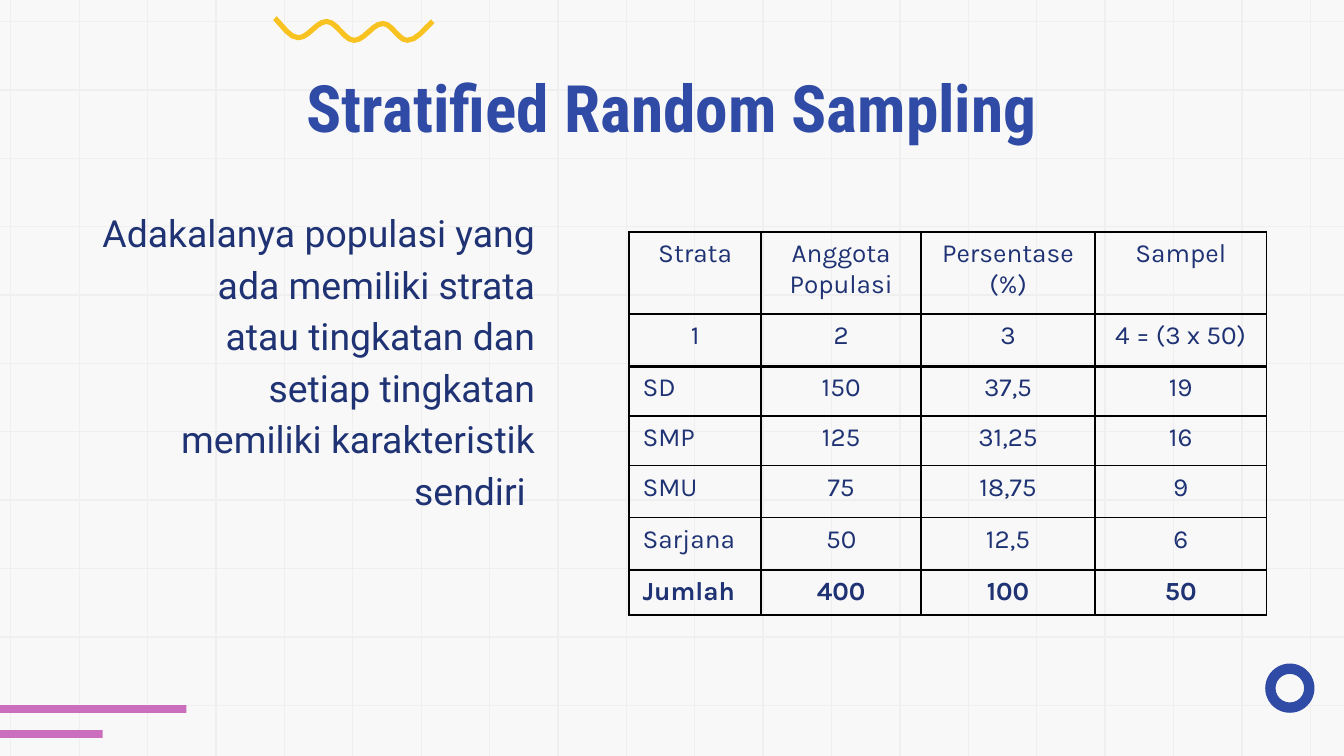
from dataclasses import dataclass
from itertools import pairwise
from math import cos, hypot, pi

from lxml import etree
from pptx import Presentation
from pptx.dml.color import RGBColor
from pptx.enum import shapes, text
from pptx.oxml import ns
from pptx.util import Pt


@dataclass(frozen=True)
class Theme:
    paper: str = "F8F8F8"
    grid: str = "EFEFEF"
    blue: str = "304BA6"
    ink: str = "1F3374"
    pink: str = "CB6EBE"
    yellow: str = "F8C220"
    border: str = "000000"
    title_size: int = 35
    body_size: int = 20
    table_size: int = 14


theme = Theme()


def paint(shape, color):
    shape.shadow.inherit = False
    shape.fill.solid()
    shape.fill.fore_color.rgb = RGBColor.from_string(color)
    shape.line.fill.background()


def style(p, name, size, color, align, bold=False):
    p.alignment = align
    p.font.name = name
    p.font.size = Pt(size)
    p.font.bold = bold
    p.font.color.rgb = RGBColor.from_string(color)


prs = Presentation()
prs.slide_width, prs.slide_height = Pt(720), Pt(405)
layout = prs.slide_layouts[5]
s = prs.slides.add_slide(layout)
s.background.fill.solid()
s.background.fill.fore_color.rgb = RGBColor.from_string(theme.paper)

grid = s.shapes.add_group_shape()
decor = s.shapes.add_group_shape()

step = 36.64
lines = [(720, 11.5 + i * step, 0, 11.5 + i * step) for i in range(11)]
lines += [(5.8 + i * step, -13, 5.8 + i * step, 418) for i in range(20)]
for ends in lines:
    line = grid.shapes.add_connector(shapes.MSO_CONNECTOR.STRAIGHT, *map(Pt, ends))
    line.line.color.rgb = RGBColor.from_string(theme.grid)
    line.line.width = Pt(0.75)
    etree.SubElement(line._element.spPr, ns.qn("a:effectLst"))

for top, width in ((377.8, 99.8), (391.2, 55)):
    bar = decor.shapes.add_shape(shapes.MSO_SHAPE.RECTANGLE, 0, Pt(top), Pt(width), Pt(4.2))
    paint(bar, theme.pink)

ring = decor.shapes.add_shape(shapes.MSO_SHAPE.DONUT, Pt(677.8), Pt(355.5), Pt(26.4), Pt(26.4))
ring.adjustments[0] = 0.21
paint(ring, theme.blue)

knots = [(141, 6.2), (159.8, 20.2), (175, 11.5), (189.7, 21.6),
         (205.2, 12.6), (218.2, 21.6), (238.6, 8)]
wave = [(x0 + (x1 - x0) * i / 6, y0 + (y1 - y0) * (1 - cos(pi * i / 6)) / 2)
        for (x0, y0), (x1, y1) in pairwise(knots) for i in range(6)]
upper, lower = [], []
for (x0, y0), (x, y), (x1, y1) in zip(wave, wave[1:], wave[2:]):
    if 147 <= x <= 232:
        length = hypot(x1 - x0, y1 - y0)
        dx, dy = 1.4 * (y1 - y0) / length, 1.4 * (x1 - x0) / length
        upper.append((Pt(x + dx), Pt(y - dy)))
        lower.append((Pt(x - dx), Pt(y + dy)))
outline = upper + lower[::-1]
builder = decor.shapes.build_freeform(*outline[0])
builder.add_line_segments(outline[1:], close=True)
paint(builder.convert_to_shape(), theme.yellow)

for group in (grid, decor):
    layout.shapes._spTree.append(group._element)

title = s.shapes.title
title.left, title.top, title.width, title.height = Pt(36), Pt(28.8), Pt(648), Pt(57.6)
tf = title.text_frame
tf.text = "Stratified Random Sampling"
tf.vertical_anchor = text.MSO_ANCHOR.TOP
tf.margin_left = tf.margin_right = tf.margin_top = tf.margin_bottom = Pt(7.2)
style(tf.paragraphs[0], "Roboto Condensed", theme.title_size, theme.blue,
      text.PP_ALIGN.CENTER, True)

body = s.shapes.add_textbox(Pt(36), Pt(113.4), Pt(257.8), Pt(168.5))
tf = body.text_frame
tf.word_wrap = True
tf.vertical_anchor = text.MSO_ANCHOR.BOTTOM
tf.margin_left = tf.margin_right = tf.margin_top = tf.margin_bottom = Pt(7.2)
tf.text = ("Adakalanya populasi yang ada memiliki strata atau tingkatan "
           "dan setiap tingkatan memiliki karakteristik sendiri ")
p = tf.paragraphs[0]
style(p, "Roboto", theme.body_size, theme.ink, text.PP_ALIGN.RIGHT)
p.line_spacing = 1.15
pPr = p._p.get_or_add_pPr()
pPr.set("marL", str(Pt(36)))
pPr.set("indent", str(Pt(-25.2)))

rows = [
    ("Strata", "Anggota Populasi", "Persentase\n(%)", "Sampel"),
    ("1", "2", "3", "4 = (3 x 50)"),
    ("SD", "150", "37,5", "19"),
    ("SMP", "125", "31,25", "16"),
    ("SMU", "75", "18,75", "9"),
    ("Sarjana", "50", "12,5", "6"),
    ("Jumlah", "400", "100", "50"),
]
widths = [70.8, 85.7, 93.1, 92]
heights = [44, 28, 26.6, 26.6, 28, 28, 23.8]
table = s.shapes.add_table(len(rows), len(widths), Pt(337), Pt(124.2),
                           Pt(sum(widths)), Pt(sum(heights))).table
table.first_row = table.horz_banding = False
for column, width in zip(table.columns, widths):
    column.width = Pt(width)
for r, (values, height) in enumerate(zip(rows, heights)):
    table.rows[r].height = Pt(height)
    for c, value in enumerate(values):
        cell = table.cell(r, c)
        cell.text = value
        cell.margin_left = cell.margin_right = Pt(7.2)
        cell.margin_top = cell.margin_bottom = Pt(3.6)
        align = text.PP_ALIGN.JUSTIFY if c == 0 and r > 1 else text.PP_ALIGN.CENTER
        for p in cell.text_frame.paragraphs:
            style(p, "Karla", theme.table_size, theme.ink, align, r == len(rows) - 1)
        tcPr = cell._tc.get_or_add_tcPr()
        for side in ("lnL", "lnR", "lnT", "lnB"):
            thick = (r, side) in ((1, "lnB"), (2, "lnT"))
            edge = etree.SubElement(tcPr, ns.qn(f"a:{side}"), w=str(Pt(2 if thick else 1)))
            fill = etree.SubElement(edge, ns.qn("a:solidFill"))
            etree.SubElement(fill, ns.qn("a:srgbClr"), val=theme.border)
        cell.fill.background()

prs.save("out.pptx")
